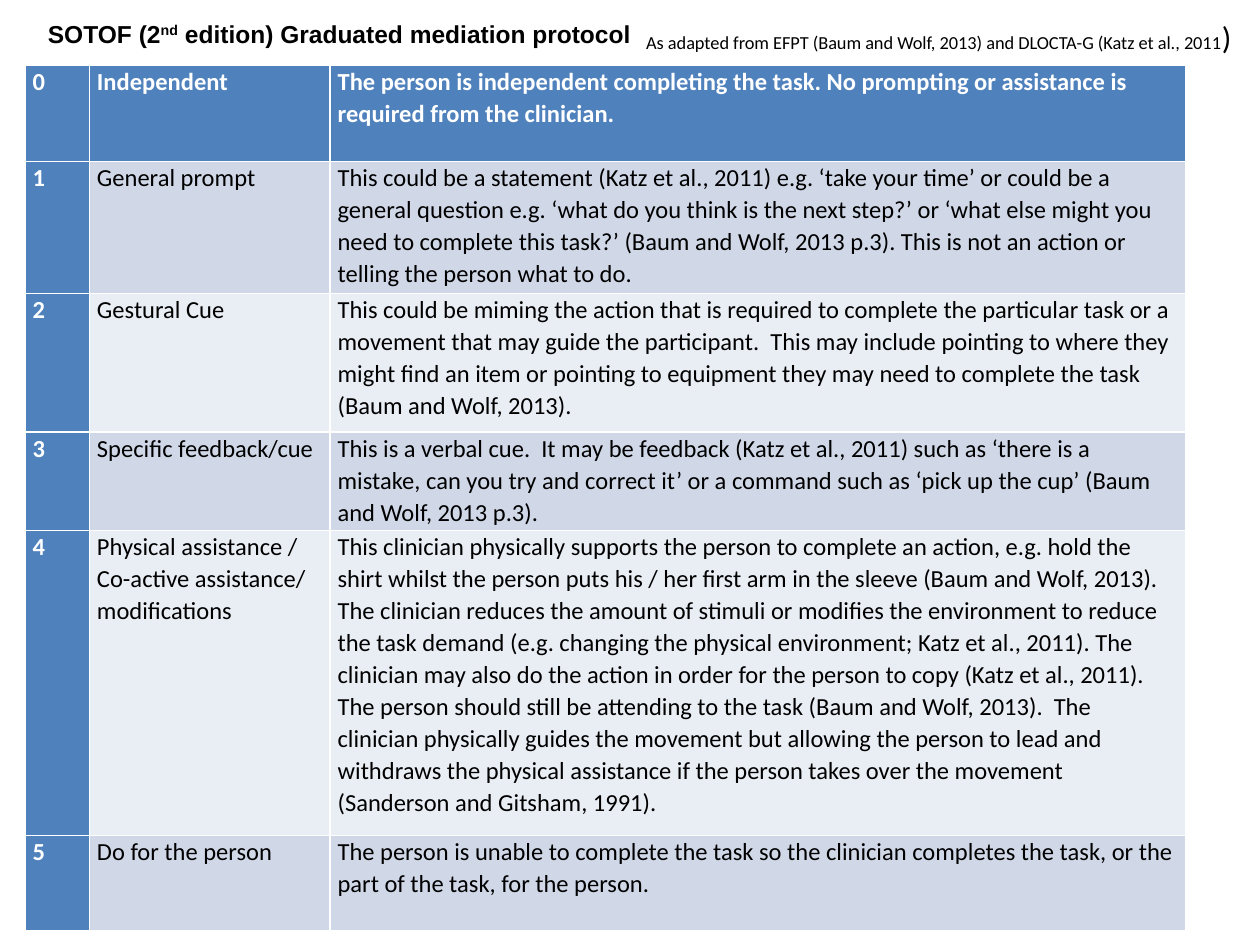
from pptx import Presentation
from pptx.dml.color import RGBColor
from pptx.enum.text import MSO_ANCHOR, MSO_AUTO_SIZE, PP_ALIGN
from pptx.util import Inches, Pt

TITLE_RUNS = [("SOTOF (2", False), ("nd", True), (" edition) Graduated mediation protocol", False)]
SOURCE_RUNS = [
    ("As adapted from EFPT (Baum and Wolf, 2013) and DLOCTA-G (Katz et al., 2011", 10.5),
    (")", 18),
]
LEVELS = [
    ("Independent",
     "The person is independent completing the task. No prompting or assistance is required "
     "from the clinician."),
    ("General prompt",
     "This could be a statement (Katz et al., 2011) e.g. ‘take your time’ or could be a general "
     "question e.g. ‘what do you think is the next step?’ or ‘what else might you need to "
     "complete this task?’ (Baum and Wolf, 2013 p.3). This is not an action or telling the "
     "person what to do."),
    ("Gestural Cue",
     "This could be miming the action that is required to complete the particular task or a "
     "movement that may guide the participant.  This may include pointing to where they might "
     "find an item or pointing to equipment they may need to complete the task "
     "(Baum and Wolf, 2013)."),
    ("Specific feedback/cue",
     "This is a verbal cue.  It may be feedback (Katz et al., 2011) such as ‘there is a mistake, "
     "can you try and correct it’ or a command such as ‘pick up the cup’ "
     "(Baum and Wolf, 2013 p.3)."),
    ("Physical assistance / Co-active assistance/\nmodifications",
     "This clinician physically supports the person to complete an action, e.g. hold the shirt "
     "whilst the person puts his / her first arm in the sleeve (Baum and Wolf, 2013). The "
     "clinician reduces the amount of stimuli or modifies the environment to reduce the task "
     "demand (e.g. changing the physical environment; Katz et al., 2011). The clinician may also "
     "do the action in order for the person to copy (Katz et al., 2011).  The person should still "
     "be attending to the task (Baum and Wolf, 2013).  The clinician physically guides the "
     "movement but allowing the person to lead and withdraws the physical assistance if the "
     "person takes over the movement (Sanderson and Gitsham, 1991)."),
    ("Do for the person",
     "The person is unable to complete the task so the clinician completes the task, or the part "
     "of the task, for the person."),
]
COLUMN_WIDTHS = [0.51, 1.91, 6.79]
ROW_HEIGHTS = [0.76, 1.05, 1.1, 0.78, 2.42, 0.76]
HEADER_FILL = "4F81BD"
BAND_FILLS = ["E9EDF4", "D0D8E8"]


def color(value):
    return RGBColor.from_string(value)


def format_font(font, name, size, hex_color, bold=False):
    font.name = name
    font.size = Pt(size)
    font.bold = bold
    font.color.rgb = color(hex_color)


def add_title(slide):
    title = slide.shapes.title
    title.left, title.top, title.width, title.height = map(Inches, (0.28, 0.08, 5, 0.37))
    frame = title.text_frame
    frame.auto_size = MSO_AUTO_SIZE.NONE
    frame.vertical_anchor = MSO_ANCHOR.MIDDLE
    paragraph = frame.paragraphs[0]
    paragraph.alignment = PP_ALIGN.LEFT
    for text, raised in TITLE_RUNS:
        run = paragraph.add_run()
        run.text = text
        format_font(run.font, "Arial", 14, "000000", True)
        if raised:
            run.font._element.set("baseline", "30000")


def add_source(slide):
    box = slide.shapes.add_textbox(Inches(5.03), Inches(0.09), Inches(5), Inches(0.4))
    box.text_frame.word_wrap = True
    for text, size in SOURCE_RUNS:
        run = box.text_frame.paragraphs[0].add_run()
        run.text = text
        format_font(run.font, "Calibri", size, "000000")


def fill_cell(cell, text, is_header, band):
    cell.margin_left = cell.margin_right = Inches(0.06)
    cell.margin_top = cell.margin_bottom = 0
    cell.fill.solid()
    cell.fill.fore_color.rgb = color(HEADER_FILL if is_header else band)
    cell.text_frame.text = text
    for paragraph in cell.text_frame.paragraphs:
        paragraph.line_spacing = 1.07
        for run in paragraph.runs:
            format_font(run.font, "Calibri", 14, "FFFFFF" if is_header else "000000", is_header)


def add_levels(slide):
    table = slide.shapes.add_table(
        len(LEVELS), len(COLUMN_WIDTHS), Inches(0.2), Inches(0.52),
        Inches(sum(COLUMN_WIDTHS)), Inches(sum(ROW_HEIGHTS))).table
    table.first_col = True
    for column, width in zip(table.columns, COLUMN_WIDTHS):
        column.width = Inches(width)
    for row, height in zip(table.rows, ROW_HEIGHTS):
        row.height = Inches(height)
    for level, (name, description) in enumerate(LEVELS):
        for column, text in enumerate((str(level), name, description)):
            is_header = level == 0 or column == 0
            fill_cell(table.cell(level, column), text, is_header, BAND_FILLS[level % 2])


def main():
    presentation = Presentation()
    presentation.slide_width = Inches(10)
    presentation.slide_height = Inches(7.5)
    slide = presentation.slides.add_slide(presentation.slide_layouts[5])
    add_levels(slide)
    add_title(slide)
    add_source(slide)
    presentation.save("out.pptx")


if __name__ == "__main__":
    main()
